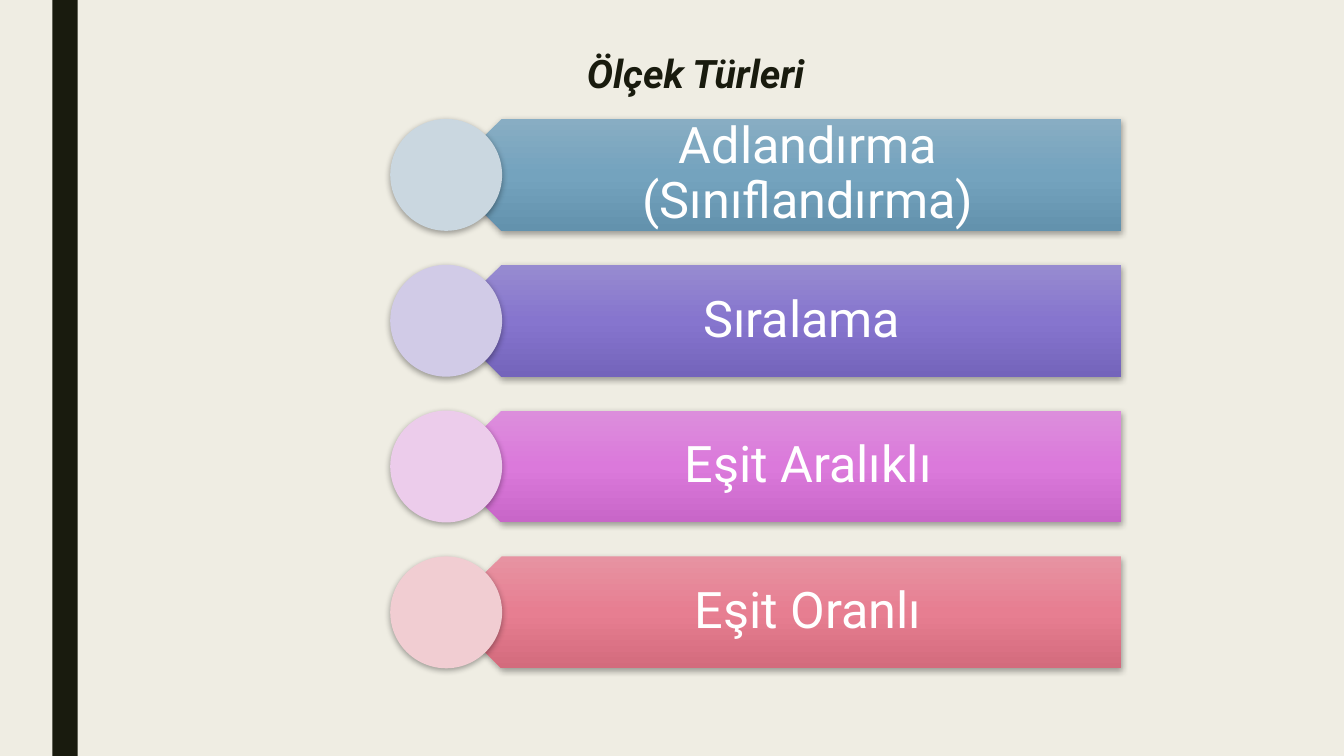
from lxml.etree import SubElement
from pptx import Presentation
from pptx.dml.color import RGBColor as Color
from pptx.enum.shapes import MSO_SHAPE as Shape
from pptx.enum.text import MSO_ANCHOR as Anchor, PP_ALIGN as Align
from pptx.oxml.ns import qn
from pptx.util import Inches, Pt

CREAM = Color(0xEF, 0xED, 0xE3)
INK = Color(0x19, 0x1B, 0x0E)
WHITE = Color(0xFF, 0xFF, 0xFF)
BLACK = Color(0x00, 0x00, 0x00)
BLUES = [Color(0x88, 0xAD, 0xC3), Color(0x74, 0xA3, 0xBE), Color(0x63, 0x92, 0xAD)]
VIOLETS = [Color(0x97, 0x8B, 0xD0), Color(0x86, 0x75, 0xCE), Color(0x74, 0x64, 0xBB)]
ORCHIDS = [Color(0xDC, 0x8E, 0xDC), Color(0xDB, 0x79, 0xDB), Color(0xC8, 0x66, 0xC8)]
ROSES = [Color(0xE7, 0x93, 0xA2), Color(0xE7, 0x7E, 0x91), Color(0xD3, 0x6B, 0x7D)]
PALE_BLUE = Color(0xCA, 0xD7, 0xE0)
PALE_VIOLET = Color(0xD1, 0xCB, 0xE7)
PALE_ORCHID = Color(0xEC, 0xCC, 0xEB)
PALE_ROSE = Color(0xF1, 0xCD, 0xD2)

SCALES = [
    ("Adlandırma (Sınıflandırma)", BLUES, PALE_BLUE),
    ("Sıralama ", VIOLETS, PALE_VIOLET),
    ("Eşit Aralıklı", ORCHIDS, PALE_ORCHID),
    ("Eşit Oranlı", ROSES, PALE_ROSE),
]


class ScaleSlide:
    font = "Roboto"
    first_row, last_row, row_height = 1.18, 5.52, 1.11
    circle_column, arrow_column, label_column, right_edge = 3.87, 4.42, 4.7, 11.12

    def __init__(self, deck):
        self.slide = deck.slides.add_slide(deck.slide_layouts[6])
        self.slide.background.fill.solid()
        self.slide.background.fill.fore_color.rgb = CREAM

    def row_top(self, row):
        return self.first_row + row * (self.last_row - self.first_row) / (len(SCALES) - 1)

    def shape(self, kind, area, color=None):
        shape = self.slide.shapes.add_shape(kind, *map(Inches, area))
        shape.shadow.inherit = False
        shape.line.fill.background()
        if color is not None:
            shape.fill.solid()
            shape.fill.fore_color.rgb = color
        return shape

    def cast_shadow(self, shape):
        effects = shape.element.spPr.find(qn("a:effectLst"))
        shadow = SubElement(effects, qn("a:outerShdw"), blurRad=str(Pt(4.5)),
                            dist=str(Pt(1.5)), dir="5400000", algn="ctr", rotWithShape="0")
        tint = SubElement(shadow, qn("a:srgbClr"), val=str(BLACK))
        SubElement(tint, qn("a:alpha"), val="35000")

    def shade(self, shape, colors):
        shape.fill.gradient()
        gradient = shape.element.spPr.find(qn("a:gradFill"))
        gradient.set("rotWithShape", "0")
        stops = gradient.find(qn("a:gsLst"))
        stops.clear()
        for position, color in zip((0, 50000, 100000), colors):
            stop = SubElement(stops, qn("a:gs"), pos=str(position))
            SubElement(stop, qn("a:srgbClr"), val=str(color))
        direction = gradient.find(qn("a:lin"))
        direction.set("ang", "5400000")
        direction.set("scaled", "0")

    def text(self, words, area, size, color, spacing, anchor=Anchor.TOP, insets=None, strong=False):
        box = self.slide.shapes.add_textbox(*map(Inches, area))
        frame = box.text_frame
        frame.word_wrap = True
        frame.vertical_anchor = anchor
        if insets:
            frame.margin_left, frame.margin_top, frame.margin_right, frame.margin_bottom = map(Inches, insets)
        frame.text = words
        para = frame.paragraphs[0]
        para.alignment = Align.CENTER
        para.line_spacing = spacing
        span = para.runs[0]
        span.font.name = self.font
        span.font.size = Pt(size)
        span.font.color.rgb = color
        span.font.bold = span.font.italic = strong

    def scale(self, row, words, colors, pale):
        top, height = self.row_top(row), self.row_height
        arrow = self.shape(Shape.PENTAGON,
                           (self.arrow_column, top, self.right_edge - self.arrow_column, height))
        arrow.rotation = 180
        self.shade(arrow, colors)
        self.cast_shadow(arrow)
        self.text(words, (self.label_column, top, self.right_edge - self.label_column, height),
                  36, WHITE, 0.9, Anchor.MIDDLE, (0.49, 0.15, 0.28, 0.15))
        self.cast_shadow(self.shape(Shape.OVAL, (self.circle_column, top, height, height), pale))


def main():
    deck = Presentation()
    deck.slide_width, deck.slide_height = Inches(13.33), Inches(7.5)
    page = ScaleSlide(deck)
    page.shape(Shape.RECTANGLE, (0.52, 0, 0.25, 7.5), INK)
    page.text("Ölçek Türleri", (1.65, 0.5, 10.5, 1.62), 28, INK, 0.89, strong=True)
    for row, (words, colors, pale) in enumerate(SCALES):
        page.scale(row, words, colors, pale)
    deck.save("out.pptx")


if __name__ == "__main__":
    main()
